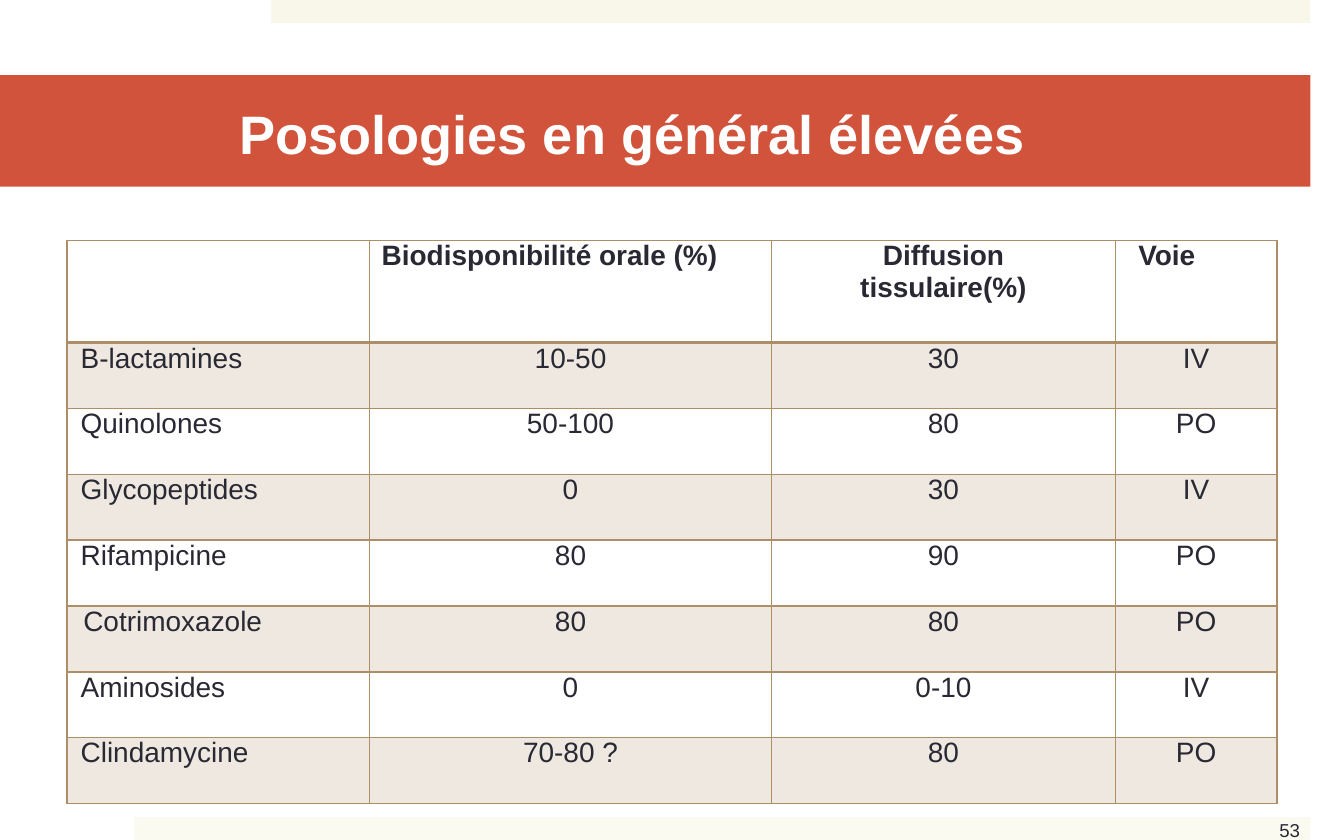
"""Build a slide with a table of antibiotic bioavailability, diffusion and route."""
from lxml.etree import SubElement
from pptx import Presentation
from pptx.dml.color import RGBColor
from pptx.enum.shapes import MSO_SHAPE as Shape
from pptx.enum.text import MSO_ANCHOR as Anchor, PP_ALIGN as Align
from pptx.oxml.ns import qn
from pptx.util import Inches, Pt

INK = "292934"
SAND = "AD8F67"


def color(value):
    return RGBColor.from_string(value)


def write(frame, text, align, size, ink, bold=False):
    para = frame.paragraphs[0]
    para.alignment = align
    span = para.add_run()
    span.text = text
    span.font.color.rgb = color(ink)
    for name, value in {"name": "Arial", "size": Pt(size), "bold": bold}.items():
        setattr(span.font, name, value)


deck = Presentation()
deck.slide_width, deck.slide_height = Inches(10), Inches(6.25)
page = deck.slides.add_slide(deck.slide_layouts[6])

bands = [
    (2.02, 0, 7.73, 0.17, "F8F7EA"),
    (1, 6.08, 8.75, 0.17, "FAFAF1"),
    (0, 0.56, 9.75, 0.83, "D2533C"),
]
for *place, fill in bands:
    band = page.shapes.add_shape(Shape.RECTANGLE, *map(Inches, place))
    band.shadow.inherit = False
    band.fill.solid()
    band.fill.fore_color.rgb = color(fill)
    band.line.fill.background()

title_format = {
    "margin_left": Inches(1.78),
    "margin_top": Inches(0.03),
    "margin_right": 0,
    "margin_bottom": 0,
    "vertical_anchor": Anchor.MIDDLE,
    "word_wrap": True,
}
for name, value in title_format.items():
    setattr(band.text_frame, name, value)
write(band.text_frame, "Posologies en général élevées", Align.LEFT, 29, "FFFFFF", True)

number_box = page.shapes.add_textbox(Inches(9.42), Inches(6.04), Inches(0.41), Inches(0.28))
number_box.text_frame.word_wrap = True
write(number_box.text_frame, "53", Align.LEFT, 10, INK)

rows = [
    ("", "Biodisponibilité orale (%)", "Diffusion tissulaire(%)", "Voie"),
    ("Β-lactamines", "10-50", "30", "IV"),
    ("Quinolones", "50-100", "80", "PO"),
    ("Glycopeptides", "0", "30", "IV"),
    ("Rifampicine", "80", "90", "PO"),
    ("Cotrimoxazole", "80", "80", "PO"),
    ("Aminosides", "0", "0-10", "IV"),
    ("Clindamycine", "70-80 ?", "80", "PO"),
]
widths = [2.25, 2.99, 2.56, 1.2]
header_margins = [(0, 0), (0.09, 0), (0.29, 0.29), (0.17, 0)]
header_aligns = [Align.LEFT, Align.LEFT, Align.CENTER, Align.LEFT]

table = page.shapes.add_table(
    len(rows), len(widths), Inches(0.5), Inches(1.79), Inches(9), Inches(4.19)
).table
table.first_row = table.horz_banding = False
for column, width in zip(table.columns, widths):
    column.width = Inches(width)

for r, texts in enumerate(rows):
    header = r == 0
    table.rows[r].height = Inches(0.76 if header else 0.49)
    for c, text in enumerate(texts):
        cell = table.cell(r, c)
        if header:
            left, right = header_margins[c]
            align = header_aligns[c]
        else:
            indent = 0.12 if text == "Cotrimoxazole" else 0.1
            left, right = (0 if c else indent), 0
            align = Align.CENTER if c else Align.LEFT
        cell_format = {
            "margin_left": Inches(left),
            "margin_right": Inches(right),
            "margin_top": 0,
            "margin_bottom": 0,
            "vertical_anchor": Anchor.TOP,
        }
        for name, value in cell_format.items():
            setattr(cell, name, value)
        if text:
            write(cell.text_frame, text, align, 15, INK, header)

        properties = cell._tc.get_or_add_tcPr()
        for side in ("L", "R", "T", "B"):
            thick = (header and side == "B") or (r == 1 and side == "T")
            border = SubElement(properties, qn(f"a:ln{side}"), w=str(Pt(2 if thick else 1)))
            SubElement(SubElement(border, qn("a:solidFill")), qn("a:srgbClr"), val=SAND)
        if r % 2:
            cell.fill.solid()
            cell.fill.fore_color.rgb = color(SAND)
            tint = properties.find(qn("a:solidFill")).find(qn("a:srgbClr"))
            SubElement(tint, qn("a:alpha"), val="20000")
        else:
            cell.fill.background()

deck.save("out.pptx")
